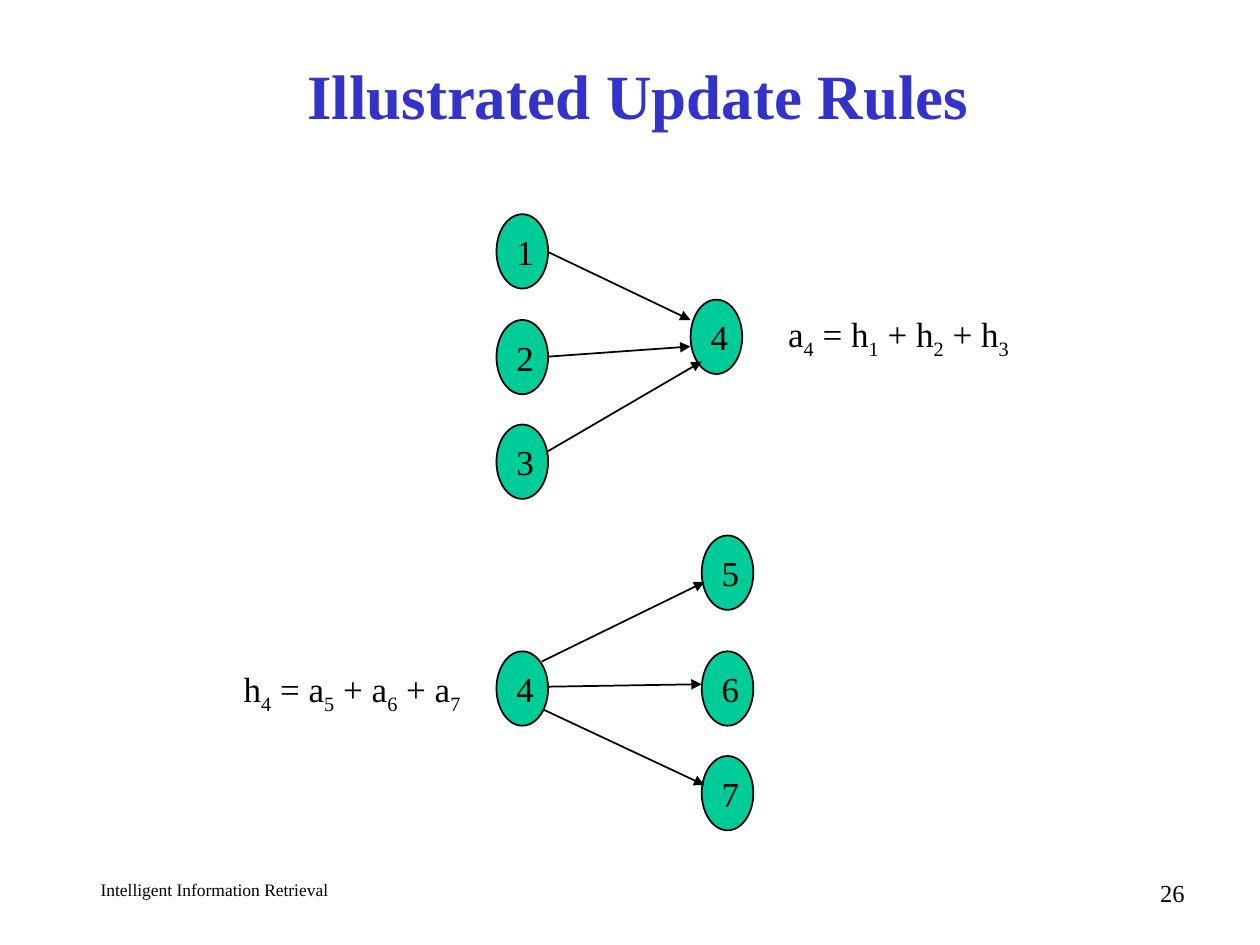
from itertools import groupby
from typing import NamedTuple

from pptx import Presentation
from pptx.dml.color import RGBColor
from pptx.enum.shapes import MSO_CONNECTOR, MSO_SHAPE
from pptx.enum.text import MSO_ANCHOR, MSO_AUTO_SIZE, PP_ALIGN
from pptx.oxml.ns import qn
from pptx.util import Pt
from lxml.etree import SubElement

FONT = "Times New Roman"
COLORS = {"ink": "000000", "title": "3333CC", "node": "00CC99"}
NODE_W, NODE_H = 29.5, 42.5
LEFT_X, HUB_X, RIGHT_X = 283.7, 394.6, 401


class Node(NamedTuple):
    label: str
    x: float
    y: float


class Arrow(NamedTuple):
    x1: float
    y1: float
    x2: float
    y2: float


class Label(NamedTuple):
    text: str
    x: float
    y: float
    w: float
    h: float
    size: float
    align: PP_ALIGN


NODES = [
    Node("1", LEFT_X, 122.4), Node("2", LEFT_X, 182.8), Node("3", LEFT_X, 242.6),
    Node("4", HUB_X, 171.2),
    Node("4", LEFT_X, 372.2),
    Node("5", RIGHT_X, 306), Node("6", RIGHT_X, 372.2), Node("7", RIGHT_X, 432),
]
ARROWS = [
    Arrow(313.2, 144, 394.6, 182.9),
    Arrow(313.2, 203.8, 394.6, 198),
    Arrow(313.2, 257.8, 401, 206.6),
    Arrow(309.6, 378, 402.5, 332.6),
    Arrow(312.5, 392.4, 401, 391),
    Arrow(310.3, 405.4, 402.5, 448.6),
]
FORMULAS = [
    Label("a4 = h1 + h2 + h3", 442.1, 175, 142.6, 31, 20, PP_ALIGN.CENTER),
    Label("h4 = a5 + a6 + a7", 131, 378, 140.4, 55.4, 20, PP_ALIGN.CENTER),
]
FOOTERS = [
    Label("Intelligent Information Retrieval", 50.4, 499, 270, 18, 10, PP_ALIGN.LEFT),
    Label("26", 534.2, 498.2, 149.8, 18, 14, PP_ALIGN.RIGHT),
]


def rgb(name: str) -> RGBColor:
    return RGBColor.from_string(COLORS[name])


def add_run(p, text: str, size: float, color: str = "ink", bold: bool = False):
    r = p.add_run()
    r.text = text
    for key, value in {"name": FONT, "size": Pt(size), "bold": bold}.items():
        setattr(r.font, key, value)
    r.font.color.rgb = rgb(color)
    return r


def add_title(s, text: str) -> None:
    sp = s.shapes.title
    box = {"left": 54, "top": 23.8, "width": 612, "height": 59.8}
    for key, value in box.items():
        setattr(sp, key, Pt(value))
    tf = sp.text_frame
    tf.vertical_anchor = MSO_ANCHOR.MIDDLE
    p = tf.paragraphs[0]
    p.alignment = PP_ALIGN.CENTER
    add_run(p, text, 36, "title", bold=True)


def add_label(s, label: Label):
    sp = s.shapes.add_textbox(*map(Pt, (label.x, label.y, label.w, label.h)))
    sp.text_frame.word_wrap = True
    p = sp.text_frame.paragraphs[0]
    p.alignment = label.align
    return sp.text_frame


def add_footer(s, label: Label) -> None:
    tf = add_label(s, label)
    add_run(tf.paragraphs[0], label.text, label.size)


def add_formula(s, label: Label) -> None:
    """Write a formula with every digit as a subscript."""
    tf = add_label(s, label)
    tf.word_wrap = False
    tf.auto_size = MSO_AUTO_SIZE.SHAPE_TO_FIT_TEXT
    for is_index, chars in groupby(label.text, str.isdigit):
        r = add_run(tf.paragraphs[0], "".join(chars), label.size)
        if is_index:
            r.font._element.set("baseline", "-25000")


def add_node(s, node: Node) -> None:
    sp = s.shapes.add_shape(MSO_SHAPE.OVAL, *map(Pt, (node.x, node.y, NODE_W, NODE_H)))
    sp.shadow.inherit = False
    sp.fill.solid()
    sp.fill.fore_color.rgb = rgb("node")
    sp.line.color.rgb = rgb("ink")
    sp.line.width = Pt(1)
    tf = sp.text_frame
    frame = {"word_wrap": False, "auto_size": MSO_AUTO_SIZE.SHAPE_TO_FIT_TEXT,
             "vertical_anchor": MSO_ANCHOR.MIDDLE}
    for key, value in frame.items():
        setattr(tf, key, value)
    p = tf.paragraphs[0]
    p.alignment = PP_ALIGN.CENTER
    add_run(p, node.label, 20)


def add_arrow(s, arrow: Arrow) -> None:
    line = s.shapes.add_connector(MSO_CONNECTOR.STRAIGHT, *map(Pt, arrow))
    line.line.color.rgb = rgb("ink")
    line.line.width = Pt(1)
    SubElement(line.line._get_or_add_ln(), qn("a:tailEnd"), type="triangle")
    SubElement(line._element.spPr, qn("a:effectLst"))


def main() -> None:
    prs = Presentation()
    prs.slide_width, prs.slide_height = Pt(720), Pt(540)
    s = prs.slides.add_slide(prs.slide_layouts[5])
    add_title(s, " Illustrated Update Rules")
    for draw, items in ((add_footer, FOOTERS), (add_node, NODES),
                        (add_arrow, ARROWS), (add_formula, FORMULAS)):
        for item in items:
            draw(s, item)
    prs.save("out.pptx")


if __name__ == "__main__":
    main()
